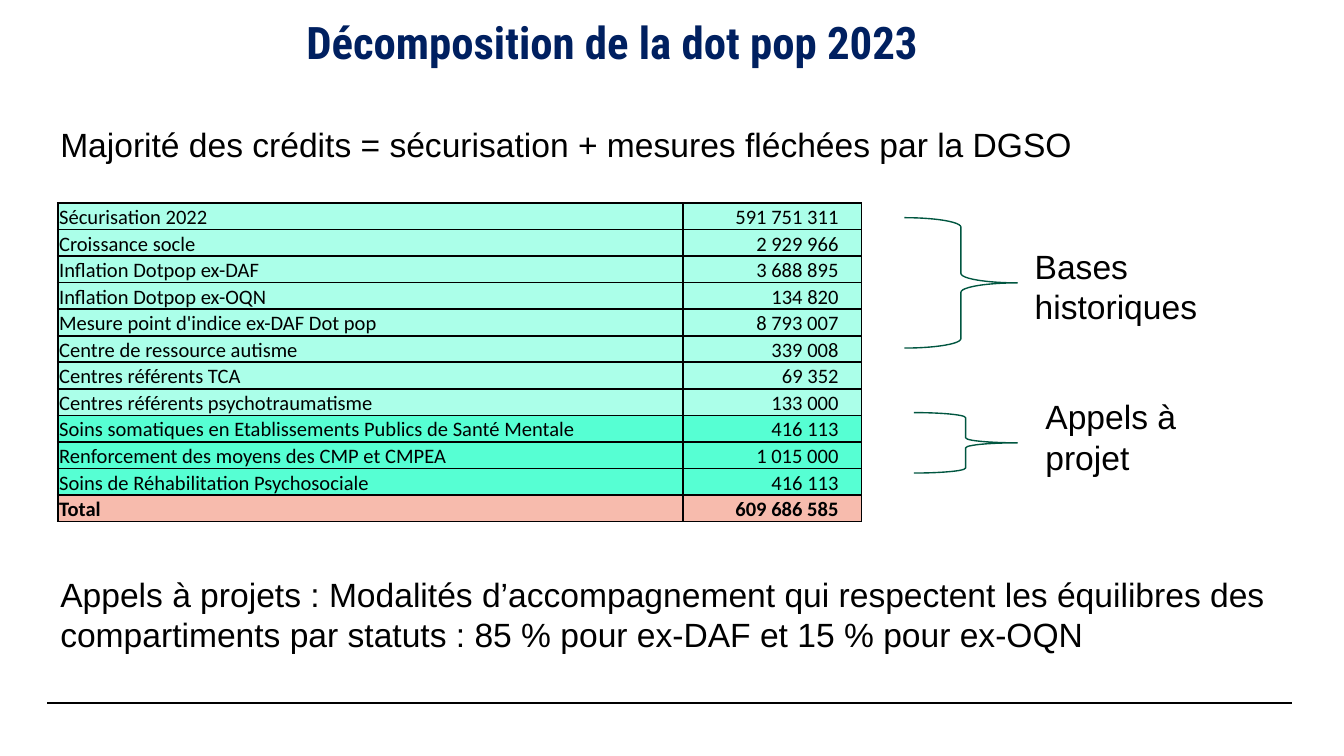
import pptx
import pptx.dml.color
import pptx.enum.shapes
import pptx.enum.text
import pptx.oxml
import pptx.oxml.ns
import pptx.util
from pptx.dml.color import RGBColor
from pptx.util import Inches, Pt

BLACK = RGBColor(0x00, 0x00, 0x00)
NAVY = RGBColor(0x00, 0x20, 0x60)
GREEN = RGBColor(0x00, 0x56, 0x40)
PALE_MINT = RGBColor(0xAB, 0xFF, 0xE9)
MINT = RGBColor(0x56, 0xFF, 0xD3)
SALMON = RGBColor(0xF7, 0xBB, 0xAD)

CREDITS = [
    ("Sécurisation 2022", "591 751 311", PALE_MINT),
    ("Croissance socle", "2 929 966", PALE_MINT),
    ("Inflation Dotpop ex-DAF", "3 688 895", PALE_MINT),
    ("Inflation Dotpop ex-OQN", "134 820", PALE_MINT),
    ("Mesure point d'indice ex-DAF Dot pop", "8 793 007", PALE_MINT),
    ("Centre de ressource autisme", "339 008", PALE_MINT),
    ("Centres référents TCA", "69 352", PALE_MINT),
    ("Centres référents psychotraumatisme", "133 000", PALE_MINT),
    ("Soins somatiques en Etablissements Publics de Santé Mentale", "416 113", MINT),
    ("Renforcement des moyens des CMP et CMPEA", "1 015 000", MINT),
    ("Soins de Réhabilitation Psychosociale", "416 113", MINT),
    ("Total", "609 686 585", SALMON),
]


def add_run(paragraph, text, size, font_name, color=BLACK, bold=False):
    run = paragraph.add_run()
    run.text = text
    run.font.size = Pt(size)
    run.font.name = font_name
    run.font.color.rgb = color
    run.font.bold = bold


def add_statement(slide, left, top, width, height, text):
    statement = slide.shapes.add_textbox(Inches(left), Inches(top), Inches(width), Inches(height))
    frame = statement.text_frame
    frame.word_wrap = True
    add_run(frame.paragraphs[0], text, 18, "Arial")
    return frame


def add_title(slide, left, top, width, height):
    title = slide.shapes.add_textbox(Inches(left), Inches(top), Inches(width), Inches(height))
    frame = title.text_frame
    frame.word_wrap = True
    frame.vertical_anchor = pptx.enum.text.MSO_ANCHOR.MIDDLE
    frame.margin_left = Inches(0.11)
    heading = frame.paragraphs[0]
    heading.line_spacing = 0.9
    add_run(heading, "Décomposition de la dot pop 2023", 24, "Roboto Condensed", NAVY, True)


def add_introduction(slide, left, top, width, height):
    frame = add_statement(slide, left, top, width, height,
                          "Majorité des crédits = sécurisation + mesures fléchées par la DGSO")
    frame.margin_top = frame.margin_right = frame.margin_bottom = 0


def border_cell(cell):
    properties = cell._tc.get_or_add_tcPr()
    for position, side in enumerate(("lnL", "lnR", "lnT", "lnB")):
        border = pptx.oxml.parse_xml(
            f'<a:{side} {pptx.oxml.ns.nsdecls("a")} w="12700">'
            f'<a:solidFill><a:srgbClr val="{BLACK}"/></a:solidFill></a:{side}>')
        properties.insert(position, border)


def add_credits_table(slide, left, top, label_width, amount_width, row_height):
    table = slide.shapes.add_table(
        len(CREDITS), 2, Inches(left), Inches(top),
        Inches(label_width + amount_width), Inches(row_height * len(CREDITS))).table
    table.first_row = table.horz_banding = False
    table.columns[0].width = Inches(label_width)
    table.columns[1].width = Inches(amount_width)
    for row, (label, amount, color) in enumerate(CREDITS):
        table.rows[row].height = Inches(row_height)
        for column, text in enumerate((label, amount)):
            cell = table.cell(row, column)
            cell.fill.solid()
            cell.fill.fore_color.rgb = color
            cell.vertical_anchor = pptx.enum.text.MSO_ANCHOR.BOTTOM
            cell.margin_left = Inches(0.01)
            cell.margin_top = Pt(1)
            cell.margin_right = Inches(0.17 if column else 0.01)
            cell.margin_bottom = 0
            paragraph = cell.text_frame.paragraphs[0]
            if column:
                paragraph.alignment = pptx.enum.text.PP_ALIGN.RIGHT
            add_run(paragraph, text, 11, "Calibri", bold=label == "Total")
            border_cell(cell)


def add_group_label(slide, left, top, width, height, label_left, label_top, label):
    brace = slide.shapes.add_shape(
        pptx.enum.shapes.MSO_SHAPE.RIGHT_BRACE,
        Inches(left), Inches(top), Inches(width), Inches(height))
    brace.shadow.inherit = False
    brace.fill.background()
    brace.line.color.rgb = GREEN
    brace.line.width = Pt(0.75)
    add_statement(slide, left + label_left, top + label_top, 1.42, 0.71, label)


def add_footer_rule(slide, left, top, width):
    rule = slide.shapes.add_connector(
        pptx.enum.shapes.MSO_CONNECTOR.STRAIGHT,
        Inches(left), Inches(top), Inches(left + width), Inches(top))
    rule.line.color.rgb = BLACK
    rule.line.width = Pt(0.8)
    rule._element.spPr.append(
        pptx.oxml.parse_xml(f'<a:effectLst {pptx.oxml.ns.nsdecls("a")}/>'))


def main():
    presentation = pptx.Presentation()
    presentation.slide_width = Inches(10)
    presentation.slide_height = Inches(10 * 9 / 16)
    slide = presentation.slides.add_slide(presentation.slide_layouts[6])
    for rule_left in (0.35, 0.39):
        add_footer_rule(slide, rule_left, 5.23, 9.22)
    add_title(slide, 2.17, 0.04, 7.64, 0.59)
    add_introduction(slide, 0.35, 0.92, 8.62, 1.18)
    add_credits_table(slide, 0.43, 1.51, 4.65, 1.33, 0.19)
    add_statement(
        slide, 0.35, 4.22, 9.21, 0.71,
        "Appels à projets : Modalités d’accompagnement qui respectent les équilibres des "
        "compartiments par statuts : 85 % pour ex-DAF et 15 % pour ex-OQN")
    add_group_label(slide, 6.8, 3.07, 0.77, 0.45, 0.88, -0.17, "Appels à projet")
    add_group_label(slide, 6.73, 1.62, 0.84, 0.97, 0.87, 0.16, "Bases historiques")
    presentation.save("out.pptx")


if __name__ == "__main__":
    main()
